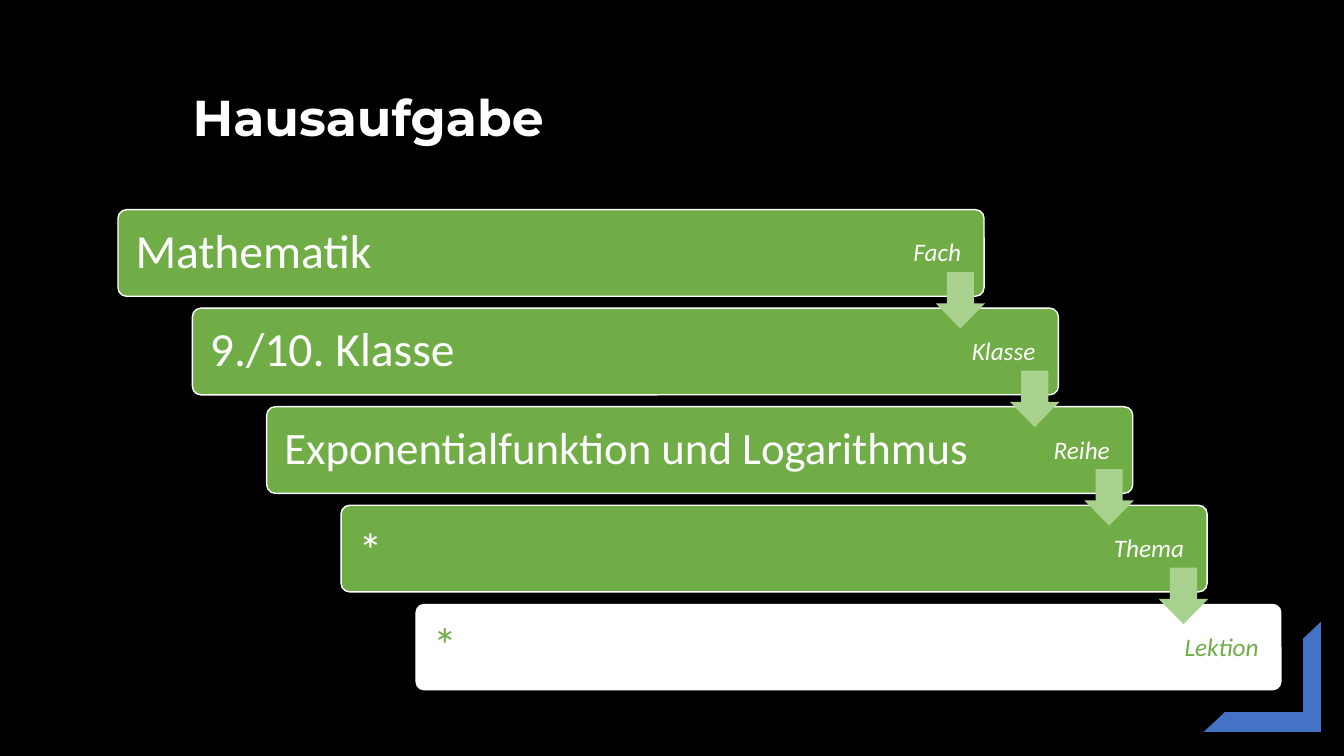
"""Build the homework slide: a staircase from subject down to lesson."""
from dataclasses import dataclass

from pptx import Presentation
from pptx.dml.color import RGBColor
from pptx.enum.shapes import MSO_SHAPE as Preset
from pptx.enum.text import MSO_ANCHOR as Anchor, MSO_AUTO_SIZE as AutoSize, PP_ALIGN as Align
from pptx.shapes.autoshape import Shape
from pptx.slide import Slide
from pptx.text.text import Font
from pptx.util import Inches, Pt


@dataclass(frozen=True)
class Theme:
    """Colours, fonts and type sizes of the slide."""
    black: RGBColor = RGBColor(0x00, 0x00, 0x00)
    white: RGBColor = RGBColor(0xFF, 0xFF, 0xFF)
    green: RGBColor = RGBColor(0x70, 0xAD, 0x47)
    light_green: RGBColor = RGBColor(0xA9, 0xD1, 0x8E)
    blue: RGBColor = RGBColor(0x44, 0x72, 0xC4)
    heading_font: str = "Montserrat"
    body_font: str = "Calibri"
    heading_size: int = 36
    step_size: int = 34
    long_step_size: int = 32
    level_size: int = 18


THEME = Theme()


@dataclass(frozen=True)
class Step:
    """One stair: its content, its level and its look."""
    content: str
    level: str
    size: int = THEME.step_size
    spacing: float = 0.9
    fill: RGBColor = THEME.green
    ink: RGBColor = THEME.white


STEPS = [
    Step("Mathematik", "Fach"),
    Step("9./10. Klasse", "Klasse"),
    Step("Exponentialfunktion und Logarithmus", "Reihe", size=THEME.long_step_size),
    Step("*", "Thema", spacing=1.0),
    Step("*", "Lektion", fill=THEME.white, ink=THEME.green),
]
LEFT, TOP = 1.17, 2.08
STEP_X, STEP_Y = 2.95 / 4, 3.91 / 4
BAR_WIDTH, BAR_HEIGHT = 8.59, 0.86


def style_font(font: Font, name: str, size: int, color: RGBColor) -> None:
    """Set the typeface, size and colour of a font."""
    font.name = name
    font.size = Pt(size)
    font.color.rgb = color


def add_preset(slide: Slide, preset: Preset, left: float, top: float, width: float,
               height: float, fill: RGBColor, adjustments: tuple[float, ...]) -> Shape:
    """Add a flat, filled preset shape without an outline."""
    shape = slide.shapes.add_shape(preset, Inches(left), Inches(top), Inches(width), Inches(height))
    shape.shadow.inherit = False
    shape.fill.solid()
    shape.fill.fore_color.rgb = fill
    shape.line.fill.background()
    for index, value in enumerate(adjustments):
        shape.adjustments[index] = value
    return shape


def add_heading(slide: Slide, text: str) -> None:
    """Place and format the slide title."""
    heading = slide.shapes.title
    heading.left, heading.top = Inches(1.81), Inches(0.8)
    heading.width, heading.height = Inches(7.78), Inches(0.71)
    frame = heading.text_frame
    frame.text = text
    frame.word_wrap = True
    frame.auto_size = AutoSize.SHAPE_TO_FIT_TEXT
    frame.vertical_anchor = Anchor.TOP
    paragraph = frame.paragraphs[0]
    paragraph.alignment = Align.LEFT
    style_font(paragraph.font, THEME.heading_font, THEME.heading_size, THEME.white)
    paragraph.font.bold = True


def add_bar(slide: Slide, step: Step, left: float, top: float) -> None:
    """Draw the bar of a step with its content."""
    bar = add_preset(slide, Preset.ROUNDED_RECTANGLE, left, top, BAR_WIDTH, BAR_HEIGHT,
                     step.fill, (0.1,))
    if step.fill != THEME.white:
        bar.line.color.rgb = THEME.white
        bar.line.width = Pt(1)
    frame = bar.text_frame
    frame.text = step.content
    frame.word_wrap = True
    frame.vertical_anchor = Anchor.MIDDLE
    frame.margin_left = frame.margin_top = frame.margin_bottom = Inches(0.15)
    frame.margin_right = Inches(1.44)
    paragraph = frame.paragraphs[0]
    paragraph.alignment = Align.LEFT
    paragraph.line_spacing = step.spacing
    style_font(paragraph.font, THEME.body_font, step.size, step.ink)


def add_level(slide: Slide, step: Step, left: float, top: float) -> None:
    """Write the level name at the right end of a bar."""
    level = slide.shapes.add_textbox(Inches(left), Inches(top), Inches(1.79), Inches(0.4))
    frame = level.text_frame
    frame.text = step.level
    frame.word_wrap = True
    frame.auto_size = AutoSize.SHAPE_TO_FIT_TEXT
    paragraph = frame.paragraphs[0]
    paragraph.alignment = Align.RIGHT
    style_font(paragraph.font, THEME.body_font, THEME.level_size, step.ink)
    paragraph.font.italic = True


def main() -> None:
    """Build and save the slide."""
    deck = Presentation()
    deck.slide_width, deck.slide_height = Inches(13.33), Inches(7.5)
    slide = deck.slides.add_slide(deck.slide_layouts[5])
    slide.background.fill.solid()
    slide.background.fill.fore_color.rgb = THEME.black
    add_heading(slide, "Hausaufgabe")
    corner = add_preset(slide, Preset.HALF_FRAME, 11.94, 6.17, 1.16, 1.09, THEME.blue, (0.18, 0.16))
    corner.rotation = 180

    corners = [(LEFT + i * STEP_X, TOP + i * STEP_Y) for i in range(len(STEPS))]
    for step, (left, top) in zip(STEPS, corners):
        add_bar(slide, step, left, top)
    for left, top in corners[:-1]:
        add_preset(slide, Preset.DOWN_ARROW, left + 8.11, top + 0.62, 0.49, 0.56,
                   THEME.light_green, (0.55, 0.51))
    for step, (left, top) in zip(STEPS, corners):
        add_level(slide, step, left + 6.67, top + 0.22)
    deck.save("out.pptx")


if __name__ == "__main__":
    main()
